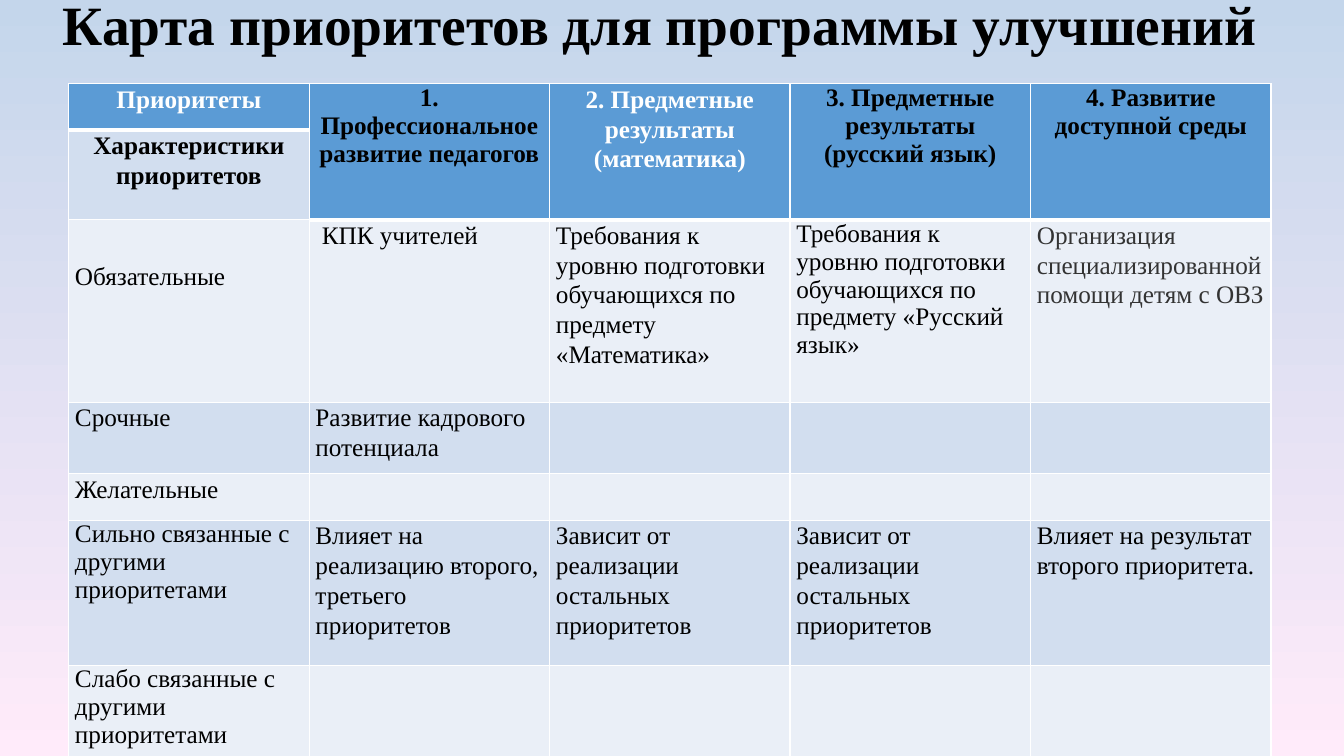
from dataclasses import dataclass
from typing import Any

from lxml.etree import SubElement
from pptx import Presentation
from pptx.dml.color import RGBColor
from pptx.enum.text import MSO_ANCHOR, MSO_AUTO_SIZE, PP_ALIGN
from pptx.oxml.ns import qn
from pptx.util import Cm, Pt


@dataclass(frozen=True)
class Theme:
    font: str = "Times New Roman"
    title_size: float = 39.6
    table_size: float = 18
    ink: str = "000000"
    soft_ink: str = "333333"
    white: str = "FFFFFF"
    header: str = "5B9BD5"
    bands: tuple[str, str] = ("EAEFF7", "D2DEEF")
    sky: str = "C4D6EB"
    pink: str = "FFEBFA"
    thin: float = 1
    thick: float = 3


@dataclass(frozen=True)
class Entry:
    text: str = ""
    color: str = "000000"
    bold: bool = False
    loose: bool = True  # wider line spacing with a gap after
    left: float = 0.16
    top: float = 0


@dataclass(frozen=True)
class Priority:
    height: float
    entries: tuple[Entry, ...]


THEME = Theme()
COLUMN_COUNT = 5
COLUMN_WIDTH = 6.06
TABLE_LEFT, TABLE_TOP = 1.73, 2.11
LOOSE = {"line_spacing": 1.07, "space_after": Pt(8)}
TIGHT = {"line_spacing": 1.0, "space_after": Pt(0)}
DEPENDS = Entry("Зависит от реализации остальных приоритетов")

# Table content
HEADING = Priority(1.17, (
    Entry("Приоритеты", THEME.white, True),
    Entry("1. Профессиональное развитие педагогов", bold=True, loose=False),
    Entry("2. Предметные результаты (математика)", THEME.white, True),
    Entry("3. Предметные результаты (русский язык)", bold=True, loose=False),
    Entry("4. Развитие доступной среды", bold=True, loose=False),
))
SUBHEADING = Priority(1.65, (Entry("Характеристики приоритетов", bold=True),))
PRIORITIES = (
    Priority(4.6, (
        Entry("Обязательные", top=1.04),
        Entry("КПК учителей", left=0.32),
        Entry("Требования к уровню подготовки обучающихся по предмету «Математика»"),
        Entry("Требования к уровню подготовки обучающихся по предмету «Русский язык»",
              loose=False),
        Entry("Организация специализированной помощи детям с ОВЗ", THEME.soft_ink),
    )),
    Priority(1.8, (Entry("Срочные"), Entry("Развитие кадрового потенциала"))),
    Priority(1.17, (Entry("Желательные"),)),
    Priority(3.66, (
        Entry("Сильно связанные с другими приоритетами", loose=False),
        Entry("Влияет на реализацию второго, третьего приоритетов"),
        DEPENDS,
        DEPENDS,
        Entry("Влияет на результат второго приоритета."),
    )),
    Priority(2.62, (Entry("Слабо связанные с другими приоритетами", loose=False),)),
)
ROWS = (HEADING, SUBHEADING, *PRIORITIES)


def apply(target: Any, formats: dict[str, Any]) -> None:
    for attribute, value in formats.items():
        setattr(target, attribute, value)


def write(paragraph: Any, text: str, size: float, color: str, bold: bool) -> None:
    run = paragraph.add_run()
    run.text = text
    apply(run.font, {"name": THEME.font, "size": Pt(size), "bold": bold})
    run.font.color.rgb = RGBColor.from_string(color)


def add_borders(cell: Any, widths: dict[str, float]) -> None:
    properties = cell._tc.get_or_add_tcPr()
    for side, width in widths.items():
        line = SubElement(properties, qn(f"a:ln{side}"), w=str(Pt(width)))
        fill = SubElement(line, qn("a:solidFill"))
        SubElement(fill, qn("a:srgbClr"), val=THEME.white)


def fill_cell(cell: Any, entry: Entry, row: int, column: int) -> None:
    in_header = row == 0 or (row == 1 and column > 0)
    borders = {"L": THEME.thin, "R": THEME.thin}
    if row == 0:
        borders["T"] = THEME.thin
    borders["B"] = THEME.thick if in_header else THEME.thin
    add_borders(cell, borders)
    cell.fill.solid()
    shade = THEME.header if in_header else THEME.bands[row % 2]
    cell.fill.fore_color.rgb = RGBColor.from_string(shade)
    apply(cell, {
        "margin_left": Cm(entry.left), "margin_right": Cm(0.16),
        "margin_top": Cm(entry.top), "margin_bottom": Cm(0),
        "vertical_anchor": MSO_ANCHOR.TOP,
    })
    if entry.text:
        paragraph = cell.text_frame.paragraphs[0]
        apply(paragraph, LOOSE if entry.loose else TIGHT)
        paragraph.alignment = PP_ALIGN.CENTER if row < 2 else PP_ALIGN.LEFT
        write(paragraph, entry.text, THEME.table_size, entry.color, entry.bold)


def paint_background(slide: Any) -> None:
    fill = slide.background.fill
    fill.gradient()
    fill.gradient_angle = 270
    for stop, color, position in zip(fill.gradient_stops, (THEME.sky, THEME.pink), (0, 1)):
        stop.color.rgb = RGBColor.from_string(color)
        stop.position = position


def add_title(slide: Any) -> None:
    title = slide.shapes.title
    apply(title, {"left": Cm(0.38), "top": Cm(0.08), "width": Cm(32.49), "height": Cm(1.25)})
    apply(title.text_frame, {
        "vertical_anchor": MSO_ANCHOR.MIDDLE, "word_wrap": True,
        "auto_size": MSO_AUTO_SIZE.NONE, "margin_top": 0, "margin_bottom": 0,
    })
    heading = title.text_frame.paragraphs[0]
    apply(heading, {"alignment": PP_ALIGN.CENTER, "line_spacing": 0.9})
    write(heading, "Карта приоритетов для программы улучшений",
          THEME.title_size, THEME.ink, True)


def add_priority_table(slide: Any) -> None:
    height = sum(row.height for row in ROWS)
    table = slide.shapes.add_table(
        len(ROWS), COLUMN_COUNT, Cm(TABLE_LEFT), Cm(TABLE_TOP),
        Cm(COLUMN_WIDTH * COLUMN_COUNT), Cm(height)).table
    apply(table, {"first_row": False, "horz_banding": False})
    for column in table.columns:
        column.width = Cm(COLUMN_WIDTH)
    for row, priority in enumerate(ROWS):
        table.rows[row].height = Cm(priority.height)
        blanks = (Entry(),) * (COLUMN_COUNT - len(priority.entries))
        for column, entry in enumerate(priority.entries + blanks):
            fill_cell(table.cell(row, column), entry, row, column)
    # Priority headings span both header rows
    for column in range(1, COLUMN_COUNT):
        table.cell(0, column).merge(table.cell(1, column))


def main() -> None:
    deck = Presentation()
    apply(deck, {"slide_width": Cm(33.87), "slide_height": Cm(19.05)})
    slide = deck.slides.add_slide(deck.slide_layouts[5])
    paint_background(slide)
    add_title(slide)
    add_priority_table(slide)
    deck.save("out.pptx")


if __name__ == "__main__":
    main()
